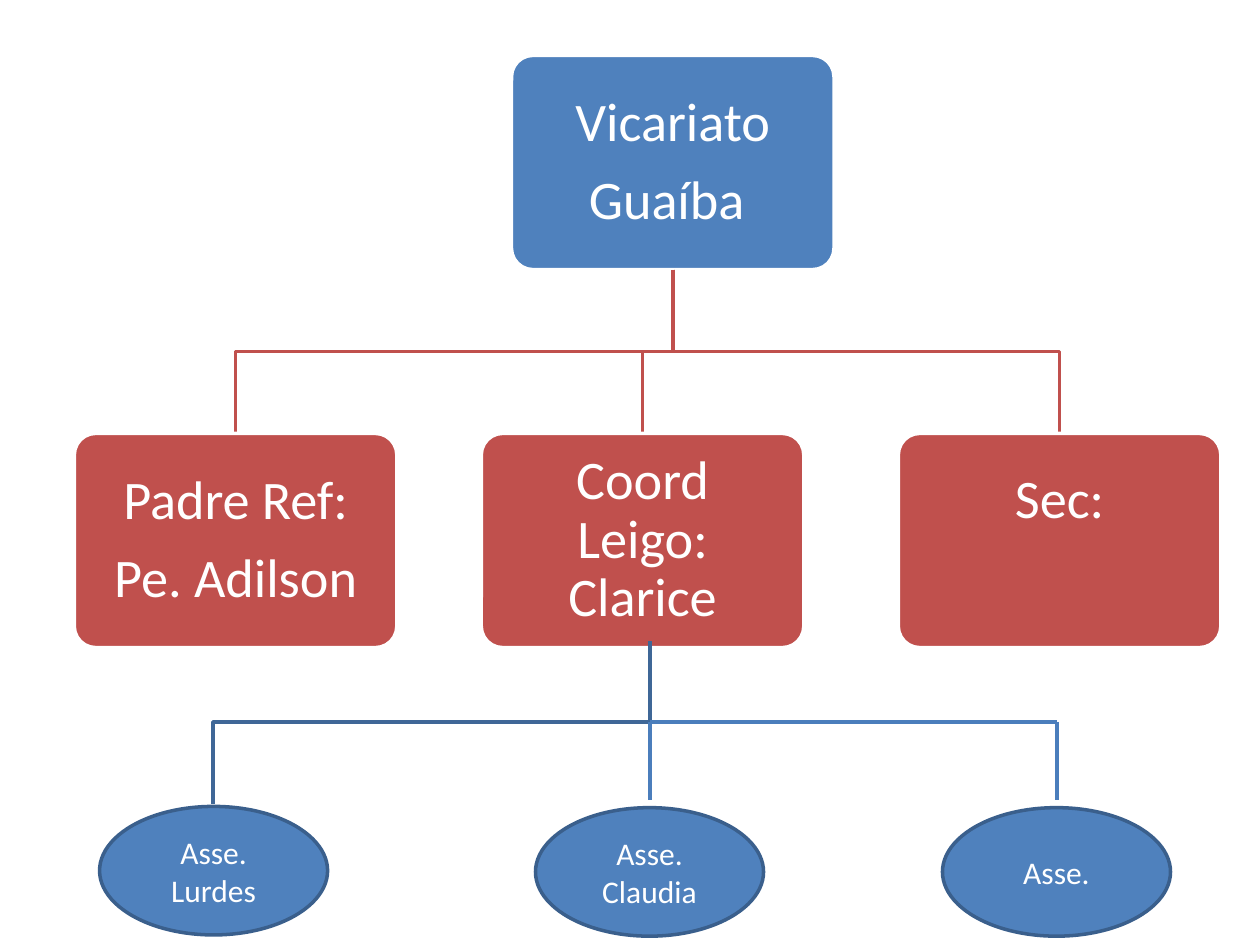
"""Builds the organisation chart of a vicariate on one slide."""
from lxml import etree
from pptx import Presentation
from pptx import util as u
from pptx.dml.color import RGBColor
from pptx.enum import shapes, text
from pptx.oxml import ns

WHITE = RGBColor(0xFF, 0xFF, 0xFF)
BLUE = RGBColor(0x4F, 0x81, 0xBD)
RED = RGBColor(0xC0, 0x50, 0x4D)
ELLIPSE_EDGE = RGBColor(0x3A, 0x5F, 0x8C)
DARK_BRANCH = RGBColor(0x3F, 0x67, 0x97)
LIGHT_BRANCH = RGBColor(0x4B, 0x7E, 0xBC)

BOX_WIDTH, BOX_HEIGHT = 2.56, 1.7
OVAL_WIDTH, OVAL_HEIGHT = 1.81, 1.02
INSET = 0.18
LINE_STEP = 0.62


class OrgChart:
    """Holds the style and the current slide."""

    font = "Calibri"
    line_width = u.Pt(2)

    def __init__(self, slide):
        self.slide = slide

    def _node(self, kind, left, top, width, height, fill, edge, lines, size):
        node = self.slide.shapes.add_shape(
            kind, u.Inches(left), u.Inches(top), u.Inches(width), u.Inches(height))
        node.shadow.inherit = False
        node.fill.solid()
        node.fill.fore_color.rgb = fill
        node.line.color.rgb = edge
        node.line.width = self.line_width
        frame = node.text_frame
        frame.word_wrap = True
        frame.vertical_anchor = text.MSO_ANCHOR.MIDDLE
        frame.text = "\n".join(lines)
        for paragraph in frame.paragraphs:
            paragraph.alignment = text.PP_ALIGN.CENTER
            paragraph.font.name = self.font
            paragraph.font.size = u.Pt(size)
            paragraph.font.color.rgb = WHITE
        return node

    def box(self, left, top, fill, lines, reserved_lines=0):
        node = self._node(shapes.MSO_SHAPE.ROUNDED_RECTANGLE, left, top,
                          BOX_WIDTH, BOX_HEIGHT, fill, WHITE, lines, 31)
        node.adjustments[0] = 0.1
        frame = node.text_frame
        frame.margin_left = frame.margin_right = frame.margin_top = u.Inches(INSET)
        frame.margin_bottom = u.Inches(INSET + reserved_lines * LINE_STEP)
        for paragraph in frame.paragraphs:
            paragraph.line_spacing = 0.9
            paragraph.space_after = u.Pt(11)

    def oval(self, left, top, lines):
        self._node(shapes.MSO_SHAPE.OVAL, left, top, OVAL_WIDTH, OVAL_HEIGHT,
                   BLUE, ELLIPSE_EDGE, lines, 18)

    def elbow(self, start, middle, end, color):
        (x1, y1), (x2, y2) = start, end
        builder = self.slide.shapes.build_freeform(u.Inches(x1), u.Inches(y1))
        corners = [(x1, middle), (x2, middle), (x2, y2)]
        builder.add_line_segments(
            [(u.Inches(x), u.Inches(y)) for x, y in corners], close=False)
        branch = builder.convert_to_shape()
        branch.shadow.inherit = False
        branch.fill.background()
        branch.line.color.rgb = color
        branch.line.width = self.line_width

    def line(self, start, end, color):
        connector = self.slide.shapes.add_connector(
            shapes.MSO_CONNECTOR.STRAIGHT, *map(u.Inches, start + end))
        connector.line.color.rgb = color
        connector.line.width = self.line_width
        etree.SubElement(connector._element.spPr, ns.qn("a:effectLst"))


def main():
    deck = Presentation()
    deck.slide_width, deck.slide_height = u.Inches(10), u.Inches(7.5)
    chart = OrgChart(deck.slides.add_slide(deck.slide_layouts[6]))

    root_left, root_top, roles_top = 4.06, 0.44, 3.44
    root_center = root_left + BOX_WIDTH / 2
    chart.box(root_left, root_top, BLUE, ["Vicariato", "Guaíba "])
    roles = [
        (0.59, ["Padre Ref:", "Pe. Adilson"], 0),
        (3.82, ["Coord Leigo: Clarice"], 0),
        (7.13, ["Sec:"], 1),
    ]
    for left, lines, reserved_lines in roles:
        chart.elbow((root_center, root_top + BOX_HEIGHT), 2.79,
                    (left + BOX_WIDTH / 2, roles_top), RED)
        chart.box(left, roles_top, RED, lines, reserved_lines)

    trunk, right, bar, branch_end = 5.16, 8.39, 5.73, 6.35
    chart.elbow((trunk, 5.09), bar, (1.69, 6.38), DARK_BRANCH)
    chart.line((trunk, bar), (trunk, branch_end), LIGHT_BRANCH)
    chart.line((trunk, bar), (right, bar), LIGHT_BRANCH)
    chart.line((right, bar), (right, branch_end), LIGHT_BRANCH)

    advisers = [
        (0.79, 6.4, ["Asse.", "Lurdes"]),
        (4.25, 6.41, ["Asse.", "Claudia"]),
        (7.48, 6.41, ["Asse."]),
    ]
    for left, top, lines in advisers:
        chart.oval(left, top, lines)

    deck.save("out.pptx")


if __name__ == "__main__":
    main()
